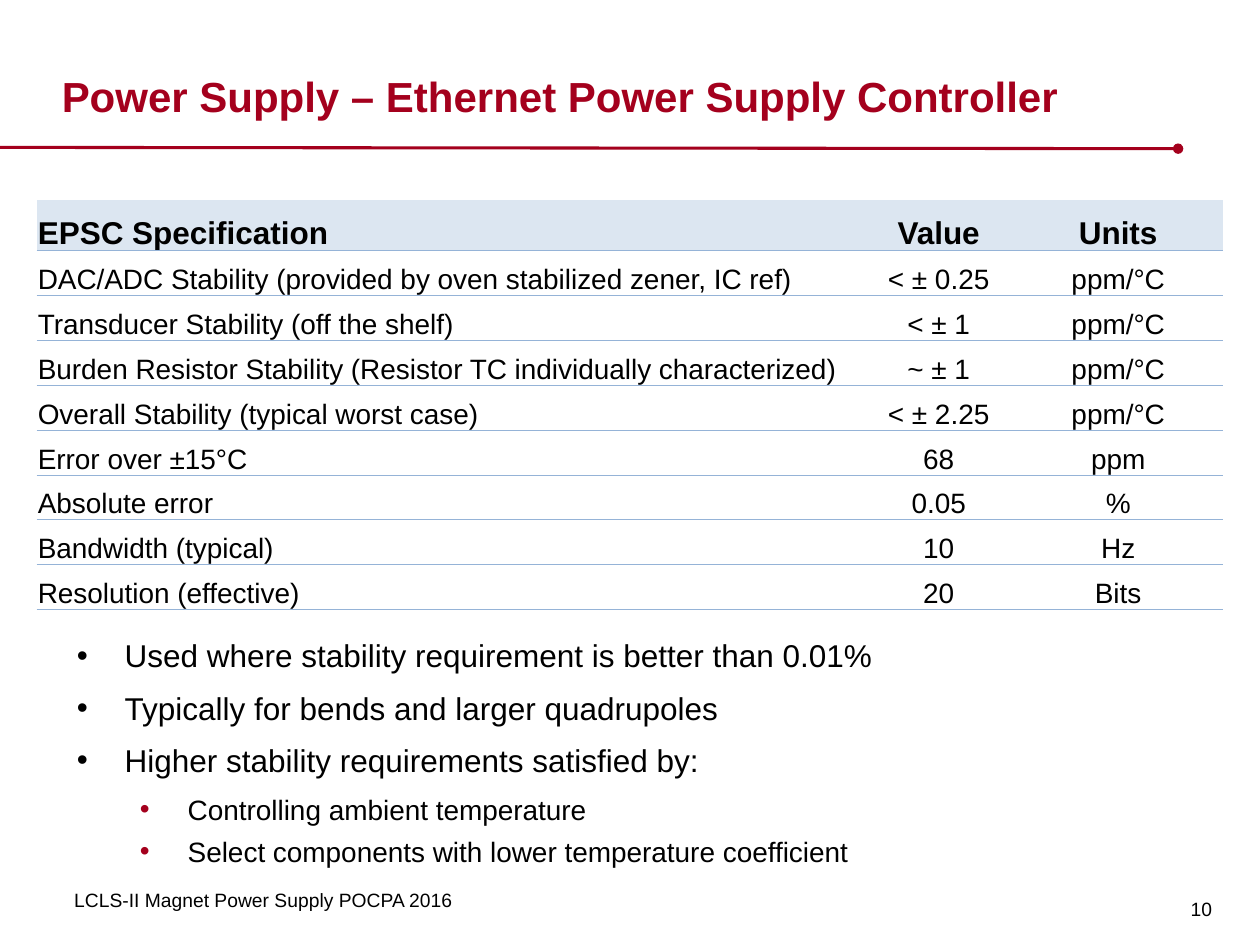
from lxml import etree
from pptx import Presentation
from pptx.dml.color import RGBColor
from pptx.enum.shapes import MSO_CONNECTOR
from pptx.enum.text import MSO_ANCHOR, MSO_AUTO_SIZE, PP_ALIGN
from pptx.oxml.ns import qn
from pptx.util import Inches, Pt

STRAIGHT = MSO_CONNECTOR.STRAIGHT
TOP, MIDDLE, BOTTOM = MSO_ANCHOR.TOP, MSO_ANCHOR.MIDDLE, MSO_ANCHOR.BOTTOM
LEFT, CENTER = PP_ALIGN.LEFT, PP_ALIGN.CENTER
NO_FIT = MSO_AUTO_SIZE.NONE
PLAIN_TABLE = "{2D5ABB26-0587-4C30-8999-92F81FD0307C}"
GRID_COLS, GRID_ROWS = 100, 75


def rgb(value):
    return RGBColor.from_string(value)


def sub(parent, tag, **attrs):
    return etree.SubElement(parent, qn(tag), attrs)


def write(p, text, size=16, color="000000", bold=False, align=LEFT, font="Arial"):
    p.alignment = align
    r = p.add_run()
    r.text = text
    r.font.name, r.font.size, r.font.bold = font, Pt(size), bold
    r.font.color.rgb = rgb(color)


class Deck:
    red, rule, header = "A4001D", "95B3D7", "DCE6F1"

    def __init__(self):
        self.prs = Presentation()
        self.prs.slide_width, self.prs.slide_height = Inches(10), Inches(7.5)
        self.s = self.prs.slides.add_slide(self.prs.slide_layouts[1])

    def x(self, cols):
        return round(self.prs.slide_width * cols / GRID_COLS)

    def y(self, rows):
        return round(self.prs.slide_height * rows / GRID_ROWS)

    def area(self, x, y, w, h):
        return self.x(x), self.y(y), self.x(w), self.y(h)

    def frame(self, sp, anchor, insets):
        tf = sp.text_frame
        tf.word_wrap, tf.auto_size, tf.vertical_anchor = True, NO_FIT, anchor
        tf.margin_left, tf.margin_top, tf.margin_right, tf.margin_bottom = map(Inches, insets)
        return tf

    def placeholder(self, sp, area, anchor, insets):
        sp.left, sp.top, sp.width, sp.height = self.area(*area)
        return self.frame(sp, anchor, insets)

    def title(self, text, area):
        tf = self.placeholder(self.s.shapes.title, area, BOTTOM, (0, 0, 0, 0))
        write(tf.paragraphs[0], text, size=24, color=self.red, bold=True)

    def label(self, text, area, anchor=TOP, insets=(0.1, 0.05, 0.1, 0.05)):
        sp = self.s.shapes.add_textbox(*self.area(*area))
        write(self.frame(sp, anchor, insets).paragraphs[0], text, size=11)

    def bullets(self, items, area):
        tf = self.placeholder(self.s.placeholders[1], area, TOP, (0.1, 0.05, 0.1, 0.05))
        for i, (level, text) in enumerate(items):
            p = tf.paragraphs[0] if i == 0 else tf.add_paragraph()
            p.level, p.line_spacing = level, 1.2
            p.space_before, p.space_after = Pt(1 if i else 0), Pt(0 if level else 3)
            pPr = p._p.get_or_add_pPr()
            pPr.set("marL", str(Inches(0.38 + 0.5 * level)))
            pPr.set("indent", str(Inches(-0.38)))
            sub(sub(pPr, "a:buClr"), "a:srgbClr", val=self.red if level else "000000")
            sub(pPr, "a:buFont", typeface="Arial")
            sub(pPr, "a:buChar", char="•")
            write(p, text, size=16 if level else 18)

    def dotted_rule(self, x1, y1, x2, y2):
        line = self.s.shapes.add_connector(STRAIGHT, self.x(x1), self.y(y1), self.x(x2), self.y(y2))
        line.line.color.rgb, line.line.width = rgb(self.red), Pt(1.75)
        sub(line.line._get_or_add_ln(), "a:tailEnd", type="oval")
        sub(line._element.spPr, "a:effectLst")

    def border(self, cell, side):
        ln = sub(cell._tc.get_or_add_tcPr(), side, w=str(Pt(0.5)))
        sub(sub(ln, "a:solidFill"), "a:srgbClr", val=self.rule)

    def table(self, rows, area, widths, heights):
        frame = self.s.shapes.add_table(len(rows), len(widths), *self.area(*area))
        table = frame.table
        table.first_row = table.horz_banding = False
        table._tbl.tblPr.find(qn("a:tableStyleId")).text = PLAIN_TABLE
        for column, width in zip(table.columns, widths):
            column.width = self.x(width)
        for i, values in enumerate(rows):
            head = i == 0
            table.rows[i].height = self.y(heights[0 if head else 1])
            for j, text in enumerate(values):
                cell = table.cell(i, j)
                cell.vertical_anchor = BOTTOM
                cell.margin_left = cell.margin_top = cell.margin_right = Inches(0.01)
                cell.margin_bottom = 0
                self.border(cell, "a:lnB")
                if head:
                    cell.fill.solid()
                    cell.fill.fore_color.rgb = rgb(self.header)
                else:
                    cell.fill.background()
                write(cell.text_frame.paragraphs[0], text, size=18 if head else 16,
                      bold=head, align=CENTER if j else LEFT)


SPECIFICATION = [
    ("EPSC Specification", "Value", "Units"),
    ("DAC/ADC Stability (provided by oven stabilized zener, IC ref)", "< ± 0.25", "ppm/°C"),
    ("Transducer Stability (off the shelf)", "< ± 1", "ppm/°C"),
    ("Burden Resistor Stability (Resistor TC individually characterized)", "~ ± 1", "ppm/°C"),
    ("Overall Stability (typical worst case)", "< ± 2.25", "ppm/°C"),
    ("Error over ±15°C", "68", "ppm"),
    ("Absolute error", "0.05", "%"),
    ("Bandwidth (typical)", "10", "Hz"),
    ("Resolution (effective)", "20", "Bits"),
]
USES = [
    (0, "Used where stability requirement is better than 0.01%"),
    (0, "Typically for bends and larger quadrupoles"),
    (0, "Higher stability requirements satisfied by:"),
    (1, "Controlling ambient temperature"),
    (1, "Select components with lower temperature coefficient"),
]


def main():
    deck = Deck()
    # Heading and rule
    deck.dotted_rule(0, 11.7, 93.5, 11.8)
    deck.title("Power Supply – Ethernet Power Supply Controller", (4.9, 1.4, 88.6, 8.2))
    # Specification table and uses
    deck.table(SPECIFICATION, (2.9, 15.9, 94.2, 32.5), (65.7, 11.8, 16.7), (4, 3.56))
    deck.bullets(USES, (5.1, 49.4, 88.2, 21.7))
    # Footer and page number
    deck.label("LCLS-II Magnet Power Supply POCPA 2016", (4.9, 70, 45.1, 3.4))
    deck.label("10", (93.7, 69.1, 3.5, 5.9), MIDDLE, (0.08, 0.06, 0.08, 0.05))
    deck.prs.save("out.pptx")


if __name__ == "__main__":
    main()
